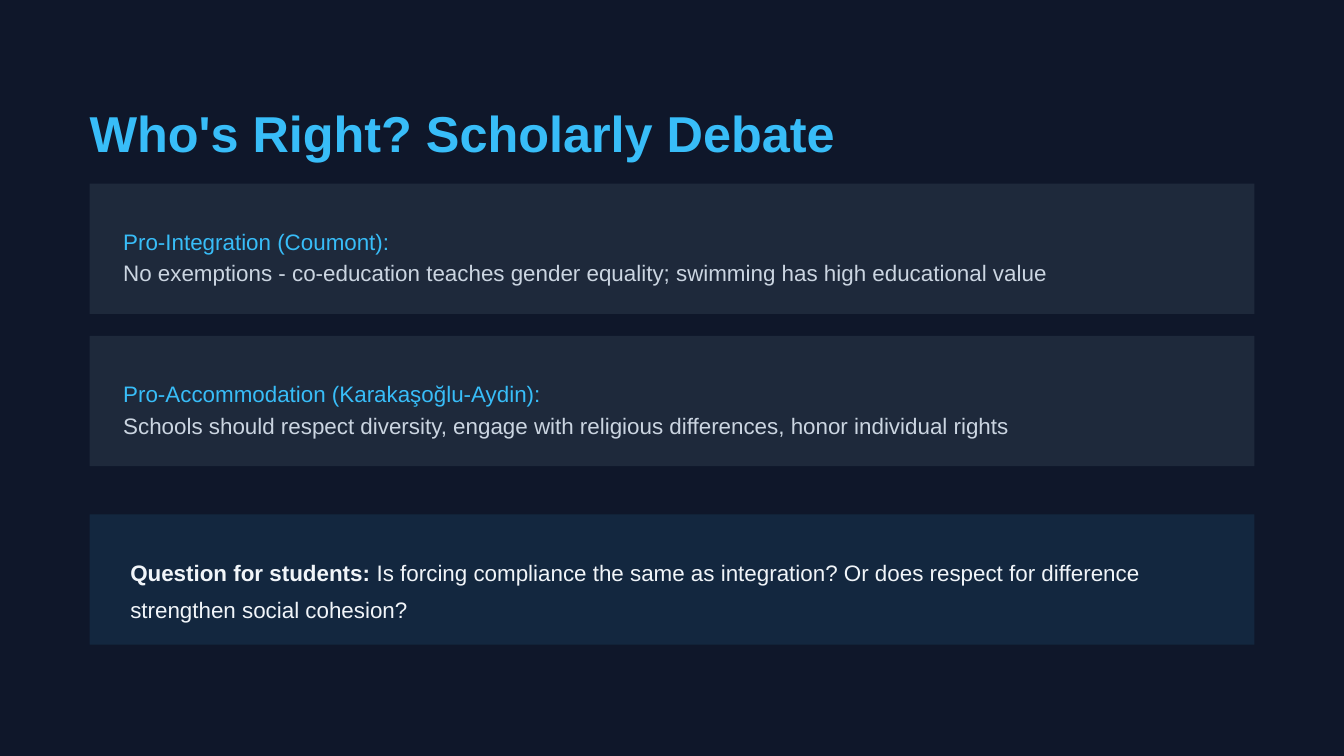
from pptx import Presentation
from pptx.dml.color import RGBColor
from pptx.enum.shapes import MSO_SHAPE as Shape
from pptx.enum.text import MSO_ANCHOR as Anchor, MSO_AUTO_SIZE as AutoSize, PP_ALIGN as Align
from pptx.oxml.ns import qn
from pptx.util import Inches, Pt
from lxml.etree import SubElement

SKY, CARD, GREY, WHITE = "38BDF8", "1E293B", "CBD5E1", "F1F5F9"
WIDTH = Inches(10)
UNIT = WIDTH / 120
MARGIN, CARD_WIDTH, CARD_HEIGHT = 8, 104, 11.63
PADDING, LINE_STEP = 3, 2.8


def paint(color_format, color):
    color_format.rgb = RGBColor.from_string(color)


def write(box, column, row, width, height, pieces, size, spacing):
    box.left, box.top = int(column * UNIT), int(row * UNIT)
    box.width, box.height = int(width * UNIT), int(height * UNIT)
    frame = box.text_frame
    frame.word_wrap = True
    frame.auto_size = AutoSize.NONE
    frame.vertical_anchor = Anchor.TOP
    frame.margin_left = frame.margin_right = frame.margin_top = frame.margin_bottom = 0
    para = frame.paragraphs[0]
    para.alignment = Align.LEFT
    para.line_spacing = spacing
    for text, color, bold in pieces:
        span = para.add_run()
        span.text = text
        span.font.name = "Arial"
        span.font.size = Pt(size)
        span.font.bold = bold
        paint(span.font.color, color)


deck = Presentation()
deck.slide_width, deck.slide_height = WIDTH, WIDTH * 9 // 16
page = deck.slides.add_slide(deck.slide_layouts[5])
page.background.fill.solid()
paint(page.background.fill.fore_color, "0F172A")

write(page.shapes.title, MARGIN, 8, 106, 5.4,
      [("Who's Right? Scholarly Debate", SKY, True)], 27, 1.2)

views = [
    ("Pro-Integration (Coumont):",
     "No exemptions - co-education teaches gender equality; swimming has high educational value"),
    ("Pro-Accommodation (Karakaşoğlu-Aydin):",
     "Schools should respect diversity, engage with religious differences, honor individual rights"),
]
view_rows = [16.4, 30]
question_row = 45.93

for row, color in zip(view_rows + [question_row], [CARD, CARD, SKY]):
    card = page.shapes.add_shape(Shape.RECTANGLE, int(MARGIN * UNIT), int(row * UNIT),
                                 int(CARD_WIDTH * UNIT), int(CARD_HEIGHT * UNIT))
    card.shadow.inherit = False
    card.line.fill.background()
    card.fill.solid()
    paint(card.fill.fore_color, color)
    if row == question_row:
        tint = card.fill._xPr.find(qn("a:solidFill"))[0]
        SubElement(tint, qn("a:alpha")).set("val", "10000")

for row, view in zip(view_rows, views):
    for line, (text, color) in enumerate(zip(view, [SKY, GREY])):
        write(page.shapes.add_textbox(0, 0, 0, 0), MARGIN + PADDING,
              row + PADDING + line * LINE_STEP, 100, LINE_STEP, [(text, color, False)], 12, 1.4)

write(page.shapes.add_textbox(0, 0, 0, 0), 11.63, question_row + PADDING, 97.3, 2 * LINE_STEP,
      [("Question for students:", WHITE, True),
       (" Is forcing compliance the same as integration? "
        "Or does respect for difference strengthen social cohesion?", WHITE, False)], 12, 1.4)

deck.save("out.pptx")
